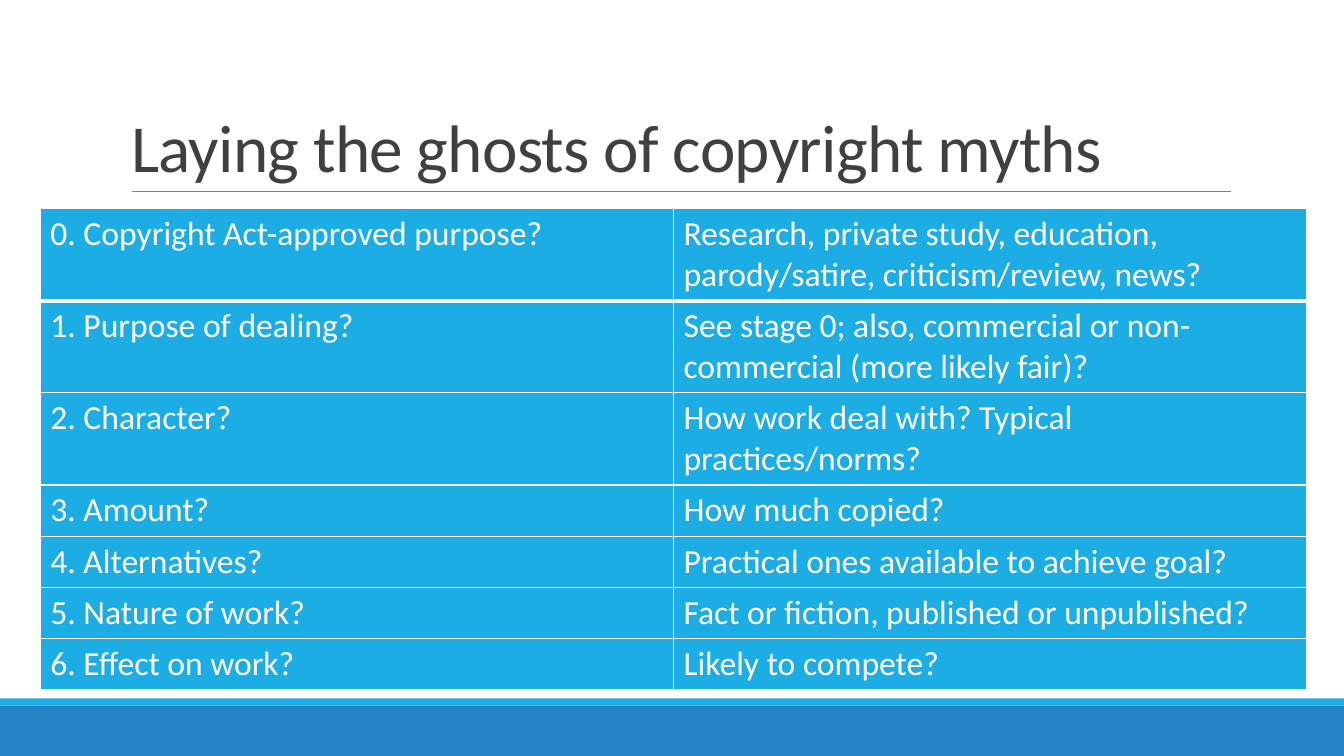
from dataclasses import dataclass

import pptx
import pptx.dml.color
import pptx.enum.shapes
import pptx.enum.text
import pptx.oxml
import pptx.oxml.ns
import pptx.util

Inches = pptx.util.Inches
Pt = pptx.util.Pt

COLORS = {
    "white": "FFFFFF",
    "sky": "1CADE4",
    "blue": "2683C6",
    "gray": "808080",
    "title": "404040",
}
FONT = "Calibri"
WIDTH, HEIGHT = 13.33, 7.5
COLUMN_WIDTH = 6.28
ONE_LINE, TWO_LINES = 0.5, 0.91


@dataclass
class Bar:
    top: float
    height: float
    color: str


@dataclass
class Stage:
    question: str
    detail: str
    height: float = ONE_LINE


BARS = [Bar(7, 0.5, "blue"), Bar(6.93, 0.07, "sky")]
STAGES = [
    Stage("0. Copyright Act-approved purpose?",
          "Research, private study, education, parody/satire, criticism/review, news?", TWO_LINES),
    Stage("1. Purpose of dealing?",
          "See stage 0; also, commercial or non-commercial (more likely fair)?", TWO_LINES),
    Stage("2. Character?", "How work deal with? Typical practices/norms?", TWO_LINES),
    Stage("3. Amount?", "How much copied?"),
    Stage("4. Alternatives?", "Practical ones available to achieve goal?"),
    Stage("5. Nature of work?", "Fact or fiction, published or unpublished?"),
    Stage("6. Effect on work?", "Likely to compete?"),
]


def rgb(name: str) -> pptx.dml.color.RGBColor:
    return pptx.dml.color.RGBColor.from_string(COLORS[name])


def apply(target, values: dict) -> None:
    for name, value in values.items():
        setattr(target, name, value)


def write(para, text: str, size: float, color: str):
    span = para.add_run()
    span.text = text
    apply(span.font, {"name": FONT, "size": Pt(size), "bold": False})
    span.font.color.rgb = rgb(color)
    return span


def draw_bar(page, bar: Bar) -> None:
    box = page.shapes.add_shape(
        pptx.enum.shapes.MSO_SHAPE.RECTANGLE,
        0, Inches(bar.top), Inches(WIDTH), Inches(bar.height))
    box.shadow.inherit = False
    box.fill.solid()
    box.fill.fore_color.rgb = rgb(bar.color)
    box.line.fill.background()


def draw_rule(page):
    rule = page.shapes.add_connector(
        pptx.enum.shapes.MSO_CONNECTOR.STRAIGHT,
        Inches(1.31), Inches(1.9), Inches(12.21), Inches(1.9))
    rule.line.color.rgb = rgb("gray")
    rule.line.width = Pt(0.5)
    properties = rule.element.find(pptx.oxml.ns.qn("p:spPr"))
    properties.append(pptx.oxml.parse_xml(f"<a:effectLst {pptx.oxml.ns.nsdecls('a')}/>"))
    return rule


def draw_title(page, rule) -> None:
    title = page.shapes.title
    apply(title, {"left": Inches(1.2), "top": Inches(0.31),
                  "width": Inches(11), "height": Inches(1.59)})
    apply(title.text_frame, {"vertical_anchor": pptx.enum.text.MSO_ANCHOR.BOTTOM,
                             "auto_size": pptx.enum.text.MSO_AUTO_SIZE.NONE,
                             "word_wrap": True})
    para = title.text_frame.paragraphs[0]
    apply(para, {"alignment": pptx.enum.text.PP_ALIGN.LEFT, "line_spacing": 0.85})
    span = write(para, "Laying the ghosts of copyright myths", 48, "title")
    span.font.element.set("spc", "-50") if hasattr(span.font, "element") else \
        span.text and para.runs[0]._r.get_or_add_rPr().set("spc", "-50")
    rule.element.addnext(title.element)


def add_borders(cell, widths: dict[str, float]) -> None:
    properties = cell._tc.get_or_add_tcPr()
    for position, (side, width) in enumerate(widths.items()):
        border = pptx.oxml.parse_xml(
            f'<a:ln{side} {pptx.oxml.ns.nsdecls("a")} w="{Pt(width)}"><a:solidFill>'
            f'<a:srgbClr val="{COLORS["white"]}"/></a:solidFill></a:ln{side}>')
        properties.insert(position, border)


def draw_table(page) -> None:
    height = sum(stage.height for stage in STAGES)
    table = page.shapes.add_table(
        len(STAGES), 2, Inches(0.4), Inches(2.07),
        Inches(2 * COLUMN_WIDTH), Inches(height)).table
    for column in table.columns:
        column.width = Inches(COLUMN_WIDTH)
    for index, stage in enumerate(STAGES):
        table.rows[index].height = Inches(stage.height)
        widths = {"L": 1, "R": 1, "T": 3 if index == 1 else 1, "B": 3 if index == 0 else 1}
        for cell, text in zip(table.rows[index].cells, (stage.question, stage.detail)):
            cell.fill.solid()
            cell.fill.fore_color.rgb = rgb("sky")
            add_borders(cell, widths)
            write(cell.text_frame.paragraphs[0], text, 24, "white")


def main() -> None:
    deck = pptx.Presentation()
    apply(deck, {"slide_width": Inches(WIDTH), "slide_height": Inches(HEIGHT)})
    page = deck.slides.add_slide(deck.slide_layouts[5])
    for bar in BARS:
        draw_bar(page, bar)
    draw_title(page, draw_rule(page))
    draw_table(page)
    deck.save("out.pptx")


if __name__ == "__main__":
    main()
